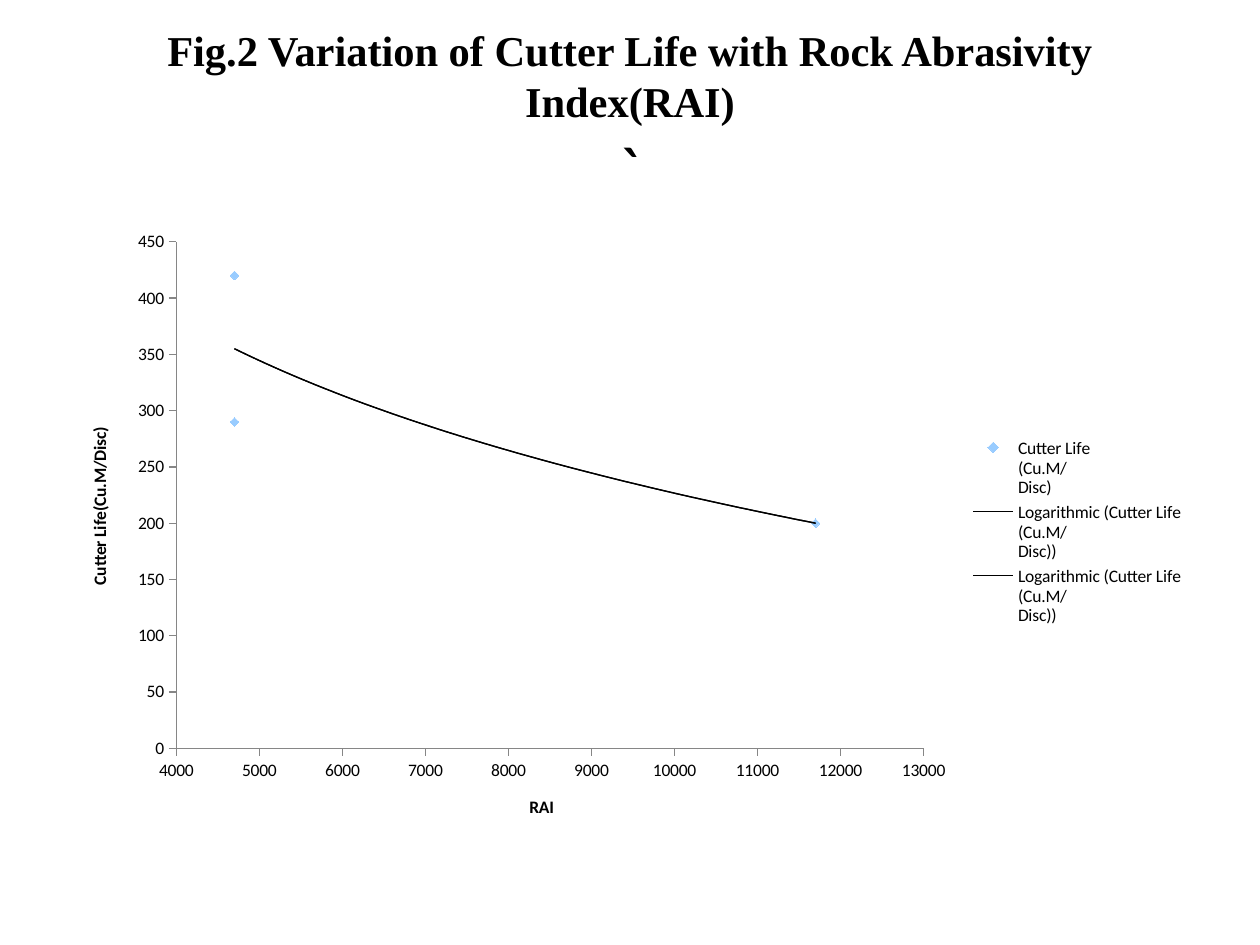
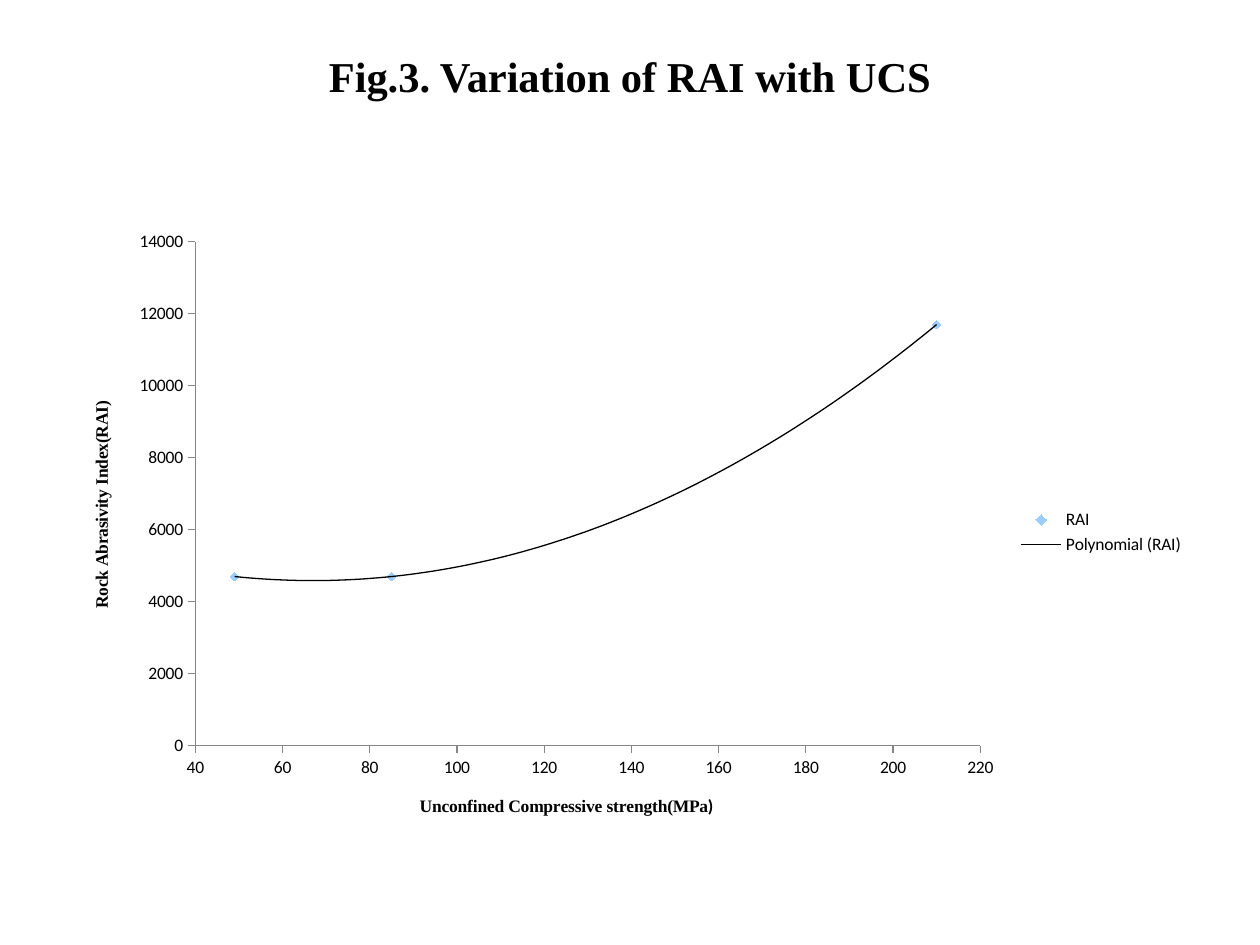
from lxml import etree
from pptx import Presentation
from pptx.chart.data import XyChartData
from pptx.dml.color import RGBColor
from pptx.enum.chart import (XL_CHART_TYPE, XL_LEGEND_POSITION, XL_MARKER_STYLE,
                             XL_TICK_MARK)
from pptx.enum.text import MSO_ANCHOR, MSO_AUTO_SIZE, PP_ALIGN
from pptx.oxml import parse_xml
from pptx.oxml.ns import nsdecls, qn
from pptx.util import Inches, Pt

COLORS = {"text": "000000", "marker": "99CCFF", "axis": "868686", "trend": "000000"}
SERIF, SANS = "Times New Roman", "Calibri"
TITLE_BOX = (0.5, 0.3, 9, 1.25)
CHART_BOX = (0.5, 1.75, 9, 4.95)

# Titles are (text, font, size, bold) runs; axis titles are (text, font) runs.
FIGURES = [
    {
        "title": [("Fig.2 Variation of Cutter Life with Rock Abrasivity Index(RAI)\v",
                   SERIF, 24.3, True),
                  ("`", SANS, 39.6, False)],
        "anchor": MSO_ANCHOR.MIDDLE, "title_inset": 0.05,
        "series": "Cutter Life\n(Cu.M/\nDisc)",
        "points": [(11700, 200), (4700, 420), (4700, 290)],
        "trends": [("log", None), ("log", None)],
        "x_axis": ([("RAI", SANS)], 4000, 13000, 1000),
        "y_axis": ([("Cutter Life(Cu.M/Disc)", SANS)], 0, 450, 50),
        "plot": (1.4, 1.92, 5.93, 4.02),
    },
    {
        "title": [("Fig.3. Variation of RAI with UCS", SERIF, 24.3, True)],
        "anchor": MSO_ANCHOR.TOP, "title_inset": 0.1,
        "series": "RAI",
        "points": [(210, 11700), (85, 4700), (49, 4700)],
        "trends": [("poly", 2)],
        "x_axis": ([("Unconfined Compressive strength(MPa", SERIF), (")", SANS)],
                   40, 220, 20),
        "y_axis": ([("Rock Abrasivity Index(RAI)", SERIF)], 0, 14000, 2000),
        "plot": (1.55, 1.92, 6.23, 4),
    },
]


def color(name):
    return RGBColor.from_string(COLORS[name])


def style_font(font, name, size, bold):
    font.name, font.size, font.bold = name, Pt(size), bold
    font.color.rgb = color("text")


def add_title(page, figure):
    box = page.shapes.title
    box.left, box.top, box.width, box.height = map(Inches, TITLE_BOX)
    frame = box.text_frame
    frame.auto_size = MSO_AUTO_SIZE.NONE
    frame.vertical_anchor = figure["anchor"]
    frame.margin_top = Inches(figure["title_inset"])
    para = frame.paragraphs[0]
    para.alignment = PP_ALIGN.CENTER
    for text, name, size, bold in figure["title"]:
        span = para.add_run()
        span.text = text.rstrip("\v")
        style_font(span.font, name, size, bold)
        if text.endswith("\v"):
            para.add_line_break()


def style_axis(axis, title, low, high, step):
    axis.minimum_scale, axis.maximum_scale, axis.major_unit = low, high, step
    axis.has_major_gridlines = False
    axis.major_tick_mark = XL_TICK_MARK.OUTSIDE
    axis.minor_tick_mark = XL_TICK_MARK.NONE
    axis.format.line.color.rgb = color("axis")
    axis.format.line.width = Pt(0.75)
    axis.tick_labels.number_format = "General"
    axis.tick_labels.number_format_is_linked = False
    para = axis.axis_title.text_frame.paragraphs[0]
    for text, name in title:
        span = para.add_run()
        span.text = text
        style_font(span.font, name, 10, True)


def add_trendline(series, kind, order):
    degree = f'<c:order val="{order}"/>' if order else ""
    trendline = parse_xml(
        f'<c:trendline {nsdecls("c", "a")}><c:spPr><a:ln w="9525"><a:solidFill>'
        f'<a:srgbClr val="{COLORS["trend"]}"/></a:solidFill></a:ln></c:spPr>'
        f'<c:trendlineType val="{kind}"/>{degree}'
        '<c:dispRSqr val="0"/><c:dispEq val="0"/></c:trendline>')
    series._element.find(qn("c:xVal")).addprevious(trendline)


def place_plot(chart, plot):
    """Fix the inner plot area, given in inches on the slide."""
    left, top, width, height = CHART_BOX
    shares = {"x": (plot[0] - left) / width, "y": (plot[1] - top) / height,
              "w": plot[2] / width, "h": plot[3] / height}
    area = chart._chartSpace.chart.plotArea
    for old in area.findall(qn("c:layout")):
        area.remove(old)
    layout = etree.Element(qn("c:layout"))
    manual = etree.SubElement(layout, qn("c:manualLayout"))
    settings = [("layoutTarget", "inner"), ("xMode", "edge"), ("yMode", "edge")]
    settings += [(key, f"{share:.4f}") for key, share in shares.items()]
    for tag, value in settings:
        etree.SubElement(manual, qn(f"c:{tag}")).set("val", value)
    area.insert(0, layout)


def add_scatter(page, figure):
    data = XyChartData()
    measured = data.add_series(figure["series"])
    for x, y in figure["points"]:
        measured.add_data_point(x, y)
    chart = page.shapes.add_chart(XL_CHART_TYPE.XY_SCATTER,
                                  *map(Inches, CHART_BOX), data).chart
    style_font(chart.font, SANS, 10, False)
    chart.has_title = False
    chart.has_legend = True
    chart.legend.position = XL_LEGEND_POSITION.RIGHT
    chart.legend.include_in_layout = False
    chart.plots[0].vary_by_categories = False

    series = chart.plots[0].series[0]
    series.smooth = False
    series.format.line.fill.background()
    series.marker.style = XL_MARKER_STYLE.DIAMOND
    series.marker.size = 5
    series.marker.format.fill.solid()
    series.marker.format.fill.fore_color.rgb = color("marker")
    series.marker.format.line.color.rgb = color("marker")
    for kind, order in figure["trends"]:
        add_trendline(series, kind, order)

    style_axis(chart.category_axis, *figure["x_axis"])
    style_axis(chart.value_axis, *figure["y_axis"])
    turned = chart.value_axis.axis_title.text_frame._txBody.bodyPr
    turned.set("rot", "-5400000")
    turned.set("vert", "horz")
    place_plot(chart, figure["plot"])


def main():
    deck = Presentation()
    deck.slide_width, deck.slide_height = Inches(10), Inches(7.5)
    for figure in FIGURES:
        page = deck.slides.add_slide(deck.slide_layouts[5])
        add_title(page, figure)
        add_scatter(page, figure)
    deck.save("out.pptx")


if __name__ == "__main__":
    main()
